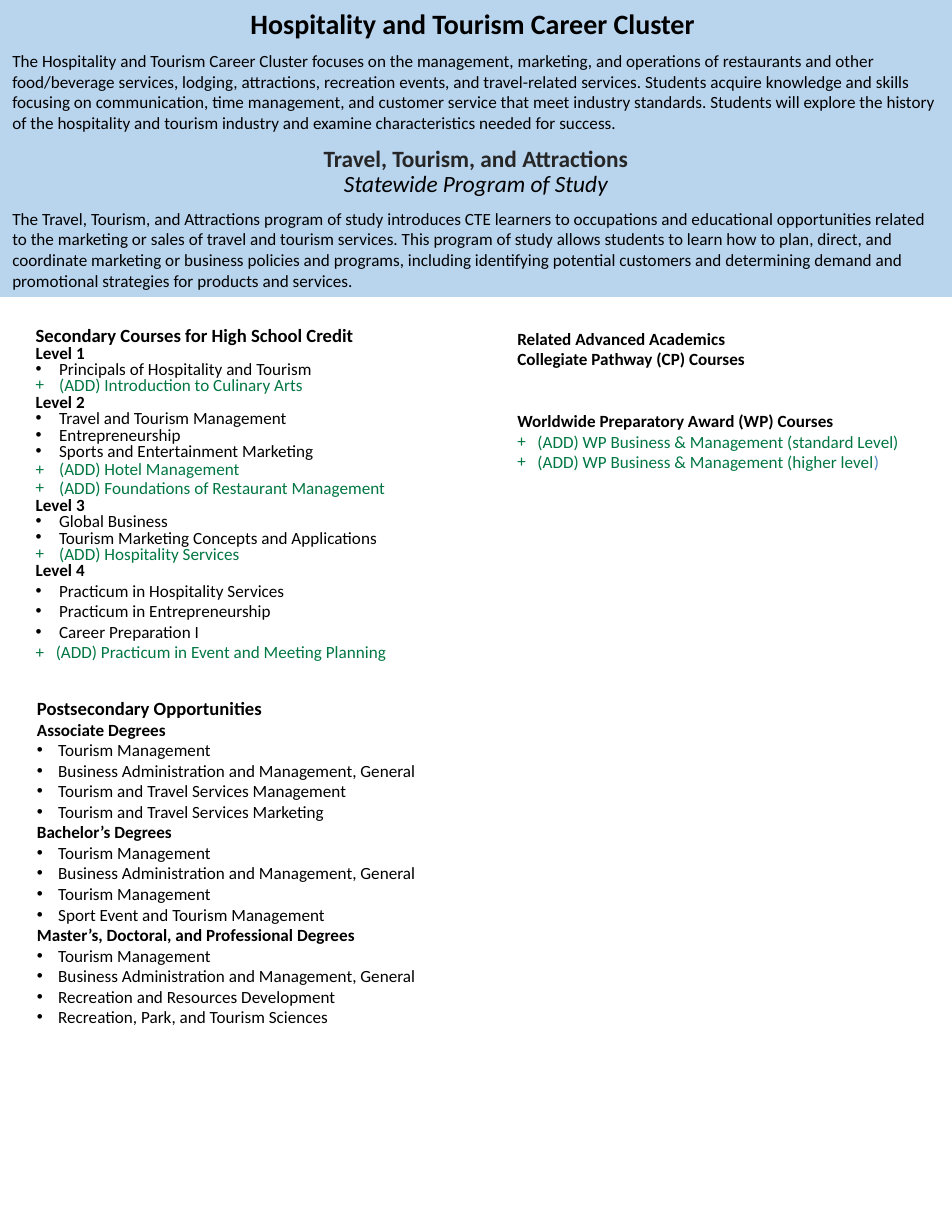
"""Build the Hospitality and Tourism Career Cluster program of study page."""
from dataclasses import dataclass

from lxml import etree
from pptx import Presentation
from pptx.dml.color import RGBColor
from pptx.enum.shapes import MSO_SHAPE
from pptx.enum.text import MSO_ANCHOR, MSO_AUTO_SIZE, PP_ALIGN
from pptx.oxml.ns import qn
from pptx.util import Emu, Pt

EMU_PER_PX = 9144
FONT = "Calibri"
BLACK, DARK, GREEN, BLUE, BAND = "000000", "262626", "007742", "4F81BD", "B9D4ED"
LEFT, CENTER = PP_ALIGN.LEFT, PP_ALIGN.CENTER
TOP, MIDDLE = MSO_ANCHOR.TOP, MSO_ANCHOR.MIDDLE
RECTANGLE = MSO_SHAPE.RECTANGLE
FIT_SHAPE, FIT_NONE = MSO_AUTO_SIZE.SHAPE_TO_FIT_TEXT, MSO_AUTO_SIZE.NONE


@dataclass(frozen=True)
class Line:
    """One paragraph and its formatting."""
    text: str
    size: int = 11
    color: str = BLACK
    bold: bool = False
    italic: bool = False
    align: PP_ALIGN = LEFT
    spacing: float = 1.0
    before: float = 0
    after: float = 0
    bullet: str = ""
    indent: int = 0
    tail: str = ""


@dataclass(frozen=True)
class Block:
    """One text area, optionally filled, with lengths in px."""
    left: int
    top: int
    width: int
    height: int
    lines: list[Line]
    fill: str = ""
    anchor: MSO_ANCHOR = TOP
    grow: bool = False


def px(length: int) -> Emu:
    """Turn px into EMU."""
    return Emu(length * EMU_PER_PX)


def rgb(color: str) -> RGBColor:
    """Turn a hex string into a colour."""
    return RGBColor.from_string(color)


def heading(text: str, spacing: float = 1.0, size: int = 11, before: float = 0) -> Line:
    """Describe a bold heading."""
    return Line(text, size, bold=True, spacing=spacing, before=before)


def items(names: list[str], spacing: float = 1.0, indent: int = 21) -> list[Line]:
    """Describe existing courses or degrees as a bulleted list."""
    return [Line(name, spacing=spacing, bullet="•", indent=indent) for name in names]


def added(name: str, spacing: float = 1.0, indent: int = 21, tail: str = "") -> Line:
    """Describe a newly added course."""
    return Line(f"(ADD) {name}", color=GREEN, spacing=spacing, bullet="+", indent=indent, tail=tail)


def set_bullet(paragraph, line: Line) -> None:
    """Give a paragraph a hanging bullet."""
    properties = paragraph._p.get_or_add_pPr()
    properties.set("marL", str(px(line.indent)))
    properties.set("indent", str(-px(line.indent)))
    etree.SubElement(properties, qn("a:buFont")).set("typeface", "Arial" if line.bullet == "•" else FONT)
    etree.SubElement(properties, qn("a:buChar")).set("char", line.bullet)


def write_line(paragraph, line: Line) -> None:
    """Write and format one paragraph."""
    paragraph.text = line.text
    paragraph.alignment = line.align
    paragraph.line_spacing = line.spacing
    paragraph.space_before = Pt(line.before)
    paragraph.space_after = Pt(line.after)
    if line.bullet:
        set_bullet(paragraph, line)
    if line.tail:
        paragraph.add_run().text = line.tail
    for run, color in zip(paragraph.runs, (line.color, BLUE)):
        run.font.name = FONT
        run.font.size = Pt(line.size)
        run.font.bold = line.bold
        run.font.italic = line.italic
        run.font.color.rgb = rgb(color)


def draw_block(slide, block: Block) -> None:
    """Draw one text area."""
    box = [px(length) for length in (block.left, block.top, block.width, block.height)]
    if block.fill:
        shape = slide.shapes.add_shape(RECTANGLE, *box)
        shape.shadow.inherit = False
        shape.fill.solid()
        shape.fill.fore_color.rgb = rgb(block.fill)
        shape.line.fill.background()
    else:
        shape = slide.shapes.add_textbox(*box)
    frame = shape.text_frame
    frame.word_wrap = True
    frame.vertical_anchor = block.anchor
    frame.auto_size = FIT_SHAPE if block.grow else FIT_NONE
    frame.margin_left = frame.margin_right = px(11 if block.grow else 10)
    frame.margin_top = frame.margin_bottom = px(6 if block.grow else 5)
    for index, line in enumerate(block.lines):
        paragraph = frame.add_paragraph() if index else frame.paragraphs[0]
        write_line(paragraph, line)


PROGRAM = [
    Line("Travel, Tourism, and Attractions", 15, DARK, bold=True, align=CENTER, spacing=0.9),
    Line("Statewide Program of Study", 15, italic=True, align=CENTER, spacing=0.9),
]
CLUSTER = [
    Line("Hospitality and Tourism Career Cluster ", 18, bold=True, align=CENTER, after=6.6),
    Line("The Hospitality and Tourism Career Cluster focuses on the management, marketing, and operations "
         "of restaurants and other food/beverage services, lodging, attractions, recreation events, and "
         "travel-related services. Students acquire knowledge and skills focusing on communication, time "
         "management, and customer service that meet industry standards. Students will explore the history "
         "of the hospitality and tourism industry and examine characteristics needed for success."),
]
DESCRIPTION = [
    Line("The Travel, Tourism, and Attractions program of study introduces CTE learners to occupations and "
         "educational opportunities related to the marketing or sales of travel and tourism services. This "
         "program of study allows students to learn how to plan, direct, and coordinate marketing or business "
         "policies and programs, including identifying potential customers and determining demand and "
         "promotional strategies for products and services."),
]
SECONDARY = [
    heading("Secondary Courses for High School Credit", 0.8, 12),
    heading("Level 1", 0.8),
    *items(["Principals of Hospitality and Tourism"], 0.8),
    added("Introduction to Culinary Arts", 0.8),
    heading("Level 2", 0.8),
    *items(["Travel and Tourism Management", "Entrepreneurship", "Sports and Entertainment Marketing"], 0.8),
    added("Hotel Management", 0.9),
    added("Foundations of Restaurant Management", 0.9),
    heading("Level 3", 0.8),
    *items(["Global Business", "Tourism Marketing Concepts and Applications"], 0.8),
    added("Hospitality Services", 0.8),
    heading("Level 4", 0.8),
    *items(["Practicum in Hospitality Services", "Practicum in Entrepreneurship", "Career Preparation I"]),
    added("Practicum in Event and Meeting Planning", indent=18),
]
ADVANCED = [
    heading("Related Advanced Academics", before=8.5),
    heading("Collegiate Pathway (CP) Courses"),
    heading("Worldwide Preparatory Award (WP) Courses", before=26.5),
    added("WP Business & Management (standard Level)", indent=18),
    added("WP Business & Management (higher level", indent=18, tail=")"),
]
SHARED_DEGREES = ["Tourism Management", "Business Administration and Management, General"]
DEGREES = {
    "Associate Degrees": ["Tourism and Travel Services Management", "Tourism and Travel Services Marketing"],
    "Bachelor’s Degrees": ["Tourism Management", "Sport Event and Tourism Management"],
    "Master’s, Doctoral, and Professional Degrees": [
        "Recreation and Resources Development", "Recreation, Park, and Tourism Sciences"],
}
POSTSECONDARY = [heading("Postsecondary Opportunities", size=12)]
for level, names in DEGREES.items():
    POSTSECONDARY += [heading(level), *items(SHARED_DEGREES + names, indent=19)]

BLOCKS = [
    Block(0, 119, 850, 70, PROGRAM, BAND, MIDDLE),
    Block(0, 0, 850, 125, CLUSTER, BAND, grow=True),
    Block(0, 180, 850, 85, DESCRIPTION, BAND, grow=True),
    Block(22, 288, 410, 304, SECONDARY),
    Block(452, 288, 398, 152, ADVANCED),
    Block(22, 616, 390, 346, POSTSECONDARY, grow=True),
]


def main() -> None:
    """Build and save the presentation."""
    presentation = Presentation()
    presentation.slide_width, presentation.slide_height = px(850), px(1100)
    slide = presentation.slides.add_slide(presentation.slide_layouts[6])
    for block in BLOCKS:
        draw_block(slide, block)
    presentation.save("out.pptx")


if __name__ == "__main__":
    main()
